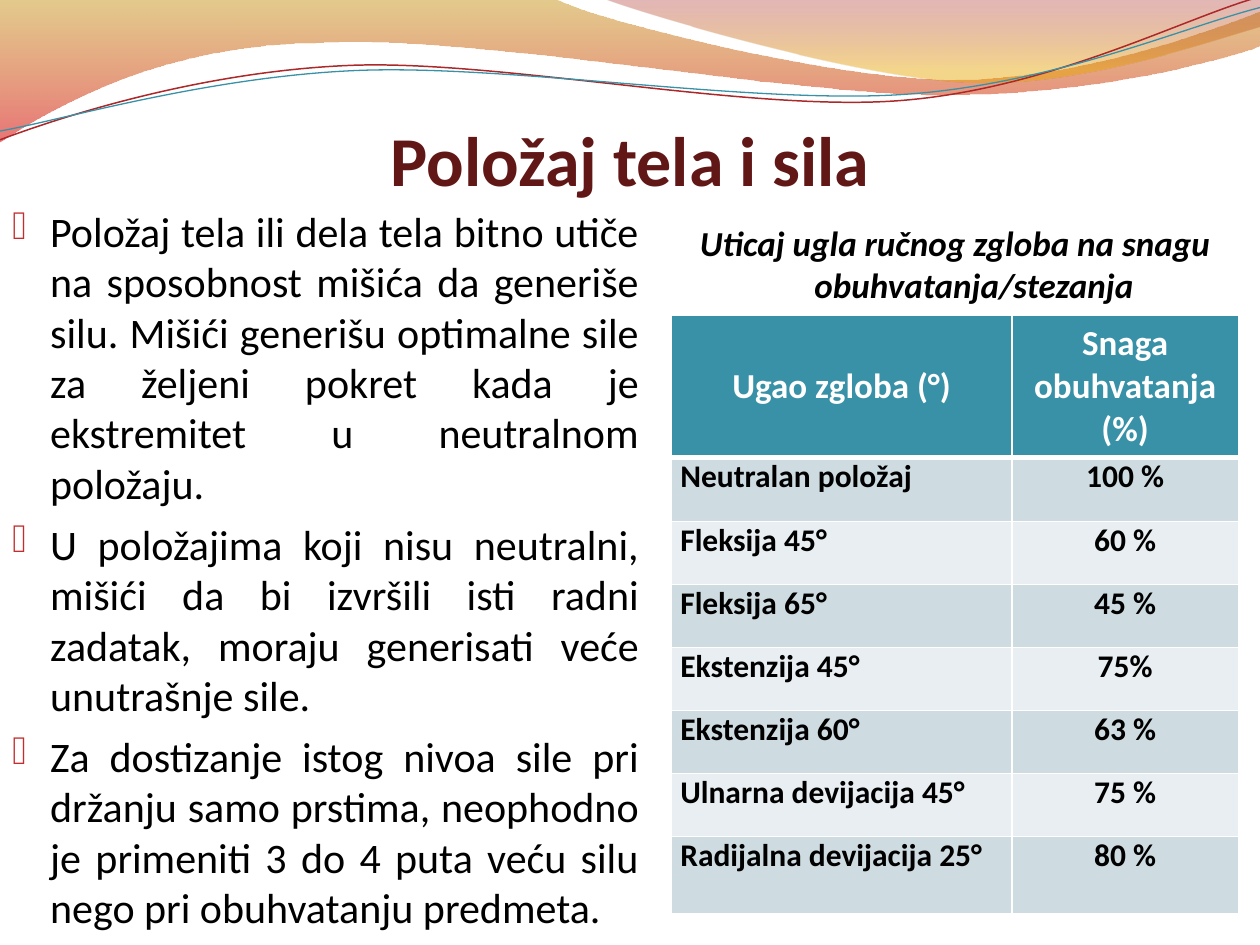
from lxml.etree import SubElement
from pptx import Presentation
from pptx.dml.color import RGBColor
from pptx.enum.text import MSO_ANCHOR, PP_ALIGN
from pptx.oxml import parse_xml
from pptx.oxml.ns import nsdecls, qn
from pptx.util import Inches, Pt


def tint(code):
    return RGBColor.from_string(code)


def put(item, form):
    for name, value in form.items():
        setattr(item, name, value)


deck = Presentation()
put(deck, {"slide_width": Inches(10), "slide_height": Inches(7.5)})
col = deck.slide_width / 10
row = deck.slide_height / 7.5
slide = deck.slides.add_slide(deck.slide_layouts[6])
shapes = slide.shapes

waves = [
    {"path": [(0, -0.01), (4.4, -0.01),
              (4.76, 0.17, 6.64, 0.63, 7.58, 0.63),
              (8.53, 0.63, 9.58, 0.26, 10, 0.09), (10.01, 0.36),
              (9.83, 0.44, 8.7, 0.76, 7.46, 0.75),
              (6.22, 0.75, 3.82, 0.28, 2.57, 0.34),
              (1.29, 0.35, 0.46, 0.83, -0.01, 1.13), (0, -0.01)],
     "fade": [(0, "C38B00", 45), (1, "D60305", 55)]},
    {"path": [(4.79, -0.01), (5.09, 0.11, 6.82, 0.62, 7.69, 0.65),
              (8.56, 0.69, 9.61, 0.32, 10, 0.21), (10, 0), (4.79, -0.01)],
     "fade": [(0, "A11112", 30), (0.8, "E9A600", 45)]},
    {"path": [(0, 1.11), (0.48, 0.93, 1.58, 0.57, 2.77, 0.52),
              (3.95, 0.47, 5.93, 0.89, 7.13, 0.8),
              (8.33, 0.71, 9.38, 0.15, 9.98, -0.02)],
     "line": ("AC2829", 0.85)},
    {"path": [(0, 1.04), (0.47, 0.96, 1.64, 0.61, 2.83, 0.56),
              (4.03, 0.51, 5.97, 0.83, 7.17, 0.75),
              (8.36, 0.67, 9.41, 0.21, 10, 0.06)],
     "line": ("3891A7", 0.75)},
]
for wave in waves:
    spots = [(round(part[n] * col), round(part[n + 1] * row))
             for part in wave["path"] for n in range(0, len(part), 2)]
    pen = shapes.build_freeform(*spots[0], scale=1)
    pen.add_line_segments(spots[1:], close="fade" in wave)
    shape = pen.convert_to_shape()
    lines = iter(list(shape.element.iter(qn("a:lnTo"))))
    for part in wave["path"][1:]:
        first = next(lines)
        if len(part) == 6:
            curve = first.makeelement(qn("a:cubicBezTo"))
            first.addprevious(curve)
            for line in (first, next(lines), next(lines)):
                curve.append(line[0])
                line.getparent().remove(line)
    shape.shadow.inherit = False
    if "line" in wave:
        code, width = wave["line"]
        shape.fill.background()
        shape.line.color.rgb = tint(code)
        shape.line.width = Pt(width)
        continue
    shape.line.fill.background()
    shape.fill.gradient()
    shape.fill.gradient_angle = 270
    for stop, (place, code, alpha) in zip(shape.fill.gradient_stops, wave["fade"]):
        stop.color.rgb = tint(code)
        stop.position = place
    for mark, (place, code, alpha) in zip(shape.element.iter(qn("a:srgbClr")), wave["fade"]):
        SubElement(mark, qn("a:alpha"), val=str(alpha * 1000))

texts = [
    {"at": (0, 0.42, 10, 1.17),
     "frame": {"vertical_anchor": MSO_ANCHOR.BOTTOM, "margin_left": 0,
               "margin_right": 0, "margin_bottom": 0},
     "para": {"alignment": PP_ALIGN.CENTER},
     "font": {"size": Pt(40), "bold": True}, "tint": "621717",
     "lines": ["Položaj tela i sila"]},
    {"at": (0, 1.58, 5.17, 5.92), "frame": {},
     "para": {"alignment": PP_ALIGN.JUSTIFY, "space_before": Pt(6)},
     "font": {"size": Pt(24)}, "tint": "000000", "hang": 0.3, "dot": "C32D2E",
     "lines": [
         "Položaj tela ili dela tela bitno utiče na sposobnost mišića da generiše silu. "
         "Mišići generišu optimalne sile za željeni pokret kada je ekstremitet u "
         "neutralnom položaju.",
         "U položajima koji nisu neutralni, mišići da bi izvršili isti radni zadatak, "
         "moraju generisati veće unutrašnje sile.",
         "Za dostizanje istog nivoa sile pri držanju samo prstima, neophodno je "
         "primeniti 3 do 4 puta veću silu nego pri obuhvatanju predmeta."]},
    {"at": (5.33, 1.71, 4.5, 5.67), "frame": {},
     "para": {"alignment": PP_ALIGN.CENTER},
     "font": {"size": Pt(20), "bold": True, "italic": True}, "tint": "000000",
     "hang": 0.3,
     "lines": ["Uticaj ugla ručnog zgloba na snagu obuhvatanja/stezanja"]},
]
for text in texts:
    x, y, w, h = text["at"]
    box = shapes.add_textbox(round(x * col), round(y * row), round(w * col), round(h * row))
    frame = box.text_frame
    put(frame, {"word_wrap": True, **text["frame"]})
    frame.text = "\n".join(text["lines"])
    for para in frame.paragraphs:
        put(para, text["para"])
        put(para.runs[0].font, {"name": "Calibri", **text["font"]})
        para.runs[0].font.color.rgb = tint(text["tint"])
        props = para._p.get_or_add_pPr()
        if "hang" in text:
            hang = round(text["hang"] * col)
            props.set("marL", str(hang))
            props.set("indent", str(-hang))
        if "dot" in text:
            SubElement(SubElement(props, qn("a:buClr")), qn("a:srgbClr"), val=text["dot"])
            SubElement(props, qn("a:buSzPct"), val="95000")
            SubElement(props, qn("a:buFont"), typeface="Wingdings 2", charset="2")
            SubElement(props, qn("a:buChar"), char="●")

data = [
    ("Ugao zgloba (°)", "Snaga obuhvatanja (%)"),
    ("Neutralan položaj", "100 %"),
    ("Fleksija 45°", "60 %"),
    ("Fleksija 65°", "45 %"),
    ("Ekstenzija 45°", "75%"),
    ("Ekstenzija 60°", "63 %"),
    ("Ulnarna devijacija 45°", "75 %"),
    ("Radijalna devijacija 25°", "80 %"),
]
wides = [2.7, 1.8]
highs = [1.13, 0.51] + [0.5] * 5 + [0.61]
table = shapes.add_table(len(data), len(wides), round(5.33 * col), round(2.5 * row),
                         round(sum(wides) * col), round(sum(highs) * row)).table
for line, high in zip(table.rows, highs):
    line.height = round(high * row)
for band, wide in zip(table.columns, wides):
    band.width = round(wide * col)
head = {"vertical_anchor": MSO_ANCHOR.MIDDLE}
body = {"vertical_anchor": MSO_ANCHOR.TOP, "margin_left": round(0.07 * col),
        "margin_right": round(0.07 * col), "margin_top": 0, "margin_bottom": 0}
for r, pair in enumerate(data):
    for c, label in enumerate(pair):
        cell = table.cell(r, c)
        cell.text = label
        put(cell, body if r else head)
        cell.fill.solid()
        cell.fill.fore_color.rgb = tint(("E8EEF1", "CEDCE1")[r % 2] if r else "3891A7")
        para = cell.text_frame.paragraphs[0]
        para.alignment = PP_ALIGN.JUSTIFY if r and not c else PP_ALIGN.CENTER
        if r:
            put(para, {"space_before": Pt(3), "space_after": Pt(3)})
        font = para.runs[0].font
        put(font, {"name": "Calibri", "size": Pt(18 if r else 20), "bold": True})
        font.color.rgb = tint("000000" if r else "FFFFFF")
        for n, side in enumerate("LRTB"):
            thick = 3 if (r, side) in ((0, "B"), (1, "T")) else 1
            cell._tc.get_or_add_tcPr().insert(n, parse_xml(
                f'<a:ln{side} {nsdecls("a")} w="{Pt(thick)}"><a:solidFill>'
                f'<a:srgbClr val="FFFFFF"/></a:solidFill></a:ln{side}>'))

deck.save("out.pptx")
